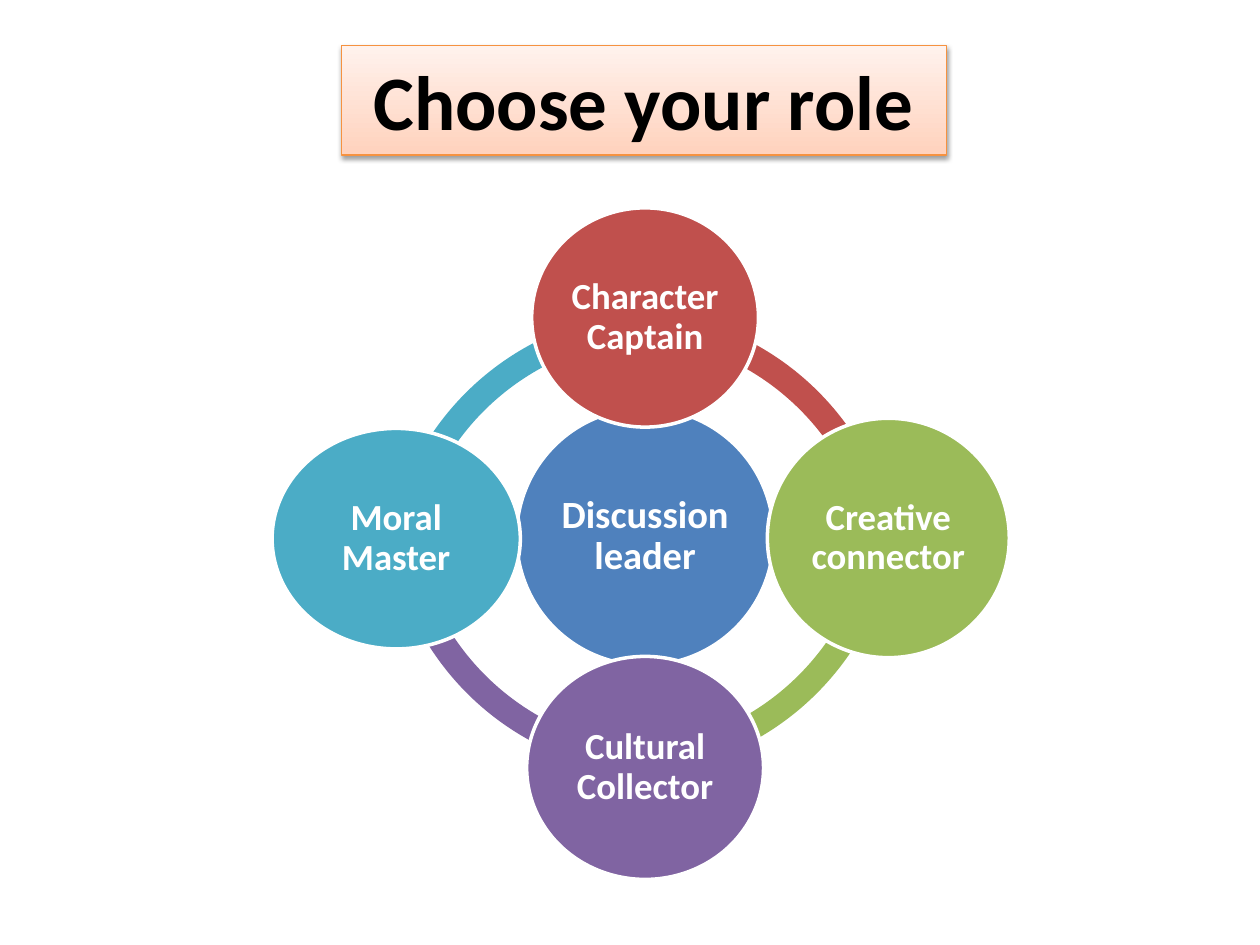
from lxml import etree
from pptx import Presentation
from pptx.dml.color import RGBColor
from pptx.enum.shapes import MSO_SHAPE
from pptx.enum.text import MSO_ANCHOR, PP_ALIGN
from pptx.oxml import parse_xml
from pptx.util import Inches, Pt

ARC, ORB = MSO_SHAPE.BLOCK_ARC, MSO_SHAPE.OVAL
MIDDLE, CENTER = MSO_ANCHOR.MIDDLE, PP_ALIGN.CENTER
NS = 'xmlns:a="http://schemas.openxmlformats.org/drawingml/2006/main"'
COLS, ROWS = 100, 75
HUES = {
    "blue": "4F81BD", "red": "C0504D", "green": "9BBB59", "plum": "8064A2",
    "teal": "4BACC6", "white": "FFFFFF", "black": "000000",
    "edge": "F69240", "peach": "FFD2BD", "cream": "FFF2ED",
}
RING, BAND = 44.2, 0.046
ARCS = [
    ("teal", 30.5, 24.7, 114.42, 159.72),
    ("plum", 30.6, 17.3, 56.46, 102.6),
    ("green", 27.1, 17.3, 5.23, 50.78),
    ("red", 27.2, 24.6, 165.01, 209.54),
]
ROLES = [
    ("Discussion leader", "blue", (41, 32.4, 20.4, 20.4), 22),
    ("Character Captain", "red", (42.2, 16.5, 18, 17.4), 21),
    ("Creative connector", "green", (60.9, 33.2, 19.2, 19), 21),
    ("Cultural Collector", "plum", (41.8, 52.1, 18.8, 17.7), 21),
    ("Moral Master", "teal", (21.6, 34, 19.7, 17.5), 21),
]


def hue(name):
    """Return the named colour."""
    return RGBColor.from_string(HUES[name])


def apply(thing, **vals):
    """Set each given attribute on an object."""
    for key, val in vals.items():
        setattr(thing, key, val)


class Deck:
    """Hold the style and the current slide."""

    def __init__(self):
        """Start a deck with one title-only slide."""
        self.prs = Presentation()
        apply(self.prs, slide_width=Inches(10), slide_height=Inches(7.5))
        self.slide = self.prs.slides.add_slide(self.prs.slide_layouts[5])
        self.font = {"name": "Calibri", "bold": True}

    def place(self, col, row, wide, high):
        """Turn grid units into lengths."""
        dx, dy = self.prs.slide_width / COLS, self.prs.slide_height / ROWS
        return [round(n) for n in (col * dx, row * dy, wide * dx, high * dy)]

    def label(self, shape, text, size, tint, **vals):
        """Put centred text in a shape."""
        frame = shape.text_frame
        frame.text = text
        apply(frame, word_wrap=True, vertical_anchor=MIDDLE)
        para = frame.paragraphs[0]
        apply(para, alignment=CENTER, **vals)
        font = para.runs[0].font
        apply(font, size=Pt(size), **self.font)
        font.color.rgb = hue(tint)

    def rim(self, shape, tint, width):
        """Outline a shape."""
        shape.line.color.rgb = hue(tint)
        shape.line.width = Pt(width)

    def shape(self, kind, box, tint):
        """Add a plain filled shape."""
        item = self.slide.shapes.add_shape(kind, *self.place(*box))
        item.shadow.inherit = False
        item.fill.solid()
        item.fill.fore_color.rgb = hue(tint)
        item.line.fill.background()
        return item

    def arc(self, tint, col, row, start, end):
        """Add one piece of the ring."""
        item = self.shape(ARC, (col, row, RING, RING), tint)
        for i, val in enumerate((start, end, BAND)):
            item.adjustments[i] = val

    def role(self, text, tint, box, size):
        """Add a labelled circle."""
        item = self.shape(ORB, box, tint)
        self.rim(item, "white", 2)
        pad = Inches(0.03)
        apply(item.text_frame, margin_left=pad, margin_right=pad,
              margin_top=pad, margin_bottom=pad)
        self.label(item, text, size, "white", line_spacing=0.9)

    def title(self, text, box):
        """Format the title as a rounded banner with a soft shadow."""
        item = self.slide.shapes.title
        spots = ("left", "top", "width", "height")
        apply(item, **dict(zip(spots, self.place(*box))))
        props = item.element.spPr
        props.insert(1, parse_xml(
            f'<a:prstGeom {NS} prst="roundRect"><a:avLst/></a:prstGeom>'))
        item.fill.gradient()
        item.fill.gradient_angle = 90
        for stop, tint in zip(item.fill.gradient_stops, ("peach", "cream")):
            stop.color.rgb = hue(tint)
        self.rim(item, "edge", 0.75)
        glow = etree.SubElement(props, props[0].tag.replace("xfrm", "effectLst"))
        glow.append(parse_xml(
            f'<a:outerShdw {NS} blurRad="{Pt(3.1)}" dist="{Pt(1.6)}" '
            f'dir="5400000" rotWithShape="0"><a:srgbClr val="{HUES["black"]}">'
            '<a:alpha val="38000"/></a:srgbClr></a:outerShdw>'))
        self.label(item, text, 44, "black")


def main():
    """Build and save the slide."""
    deck = Deck()
    deck.title("Choose your role", (27.1, 3.6, 48, 8.7))
    for arc in ARCS:
        deck.arc(*arc)
    for role in ROLES:
        deck.role(*role)
    deck.prs.save("out.pptx")


if __name__ == "__main__":
    main()
